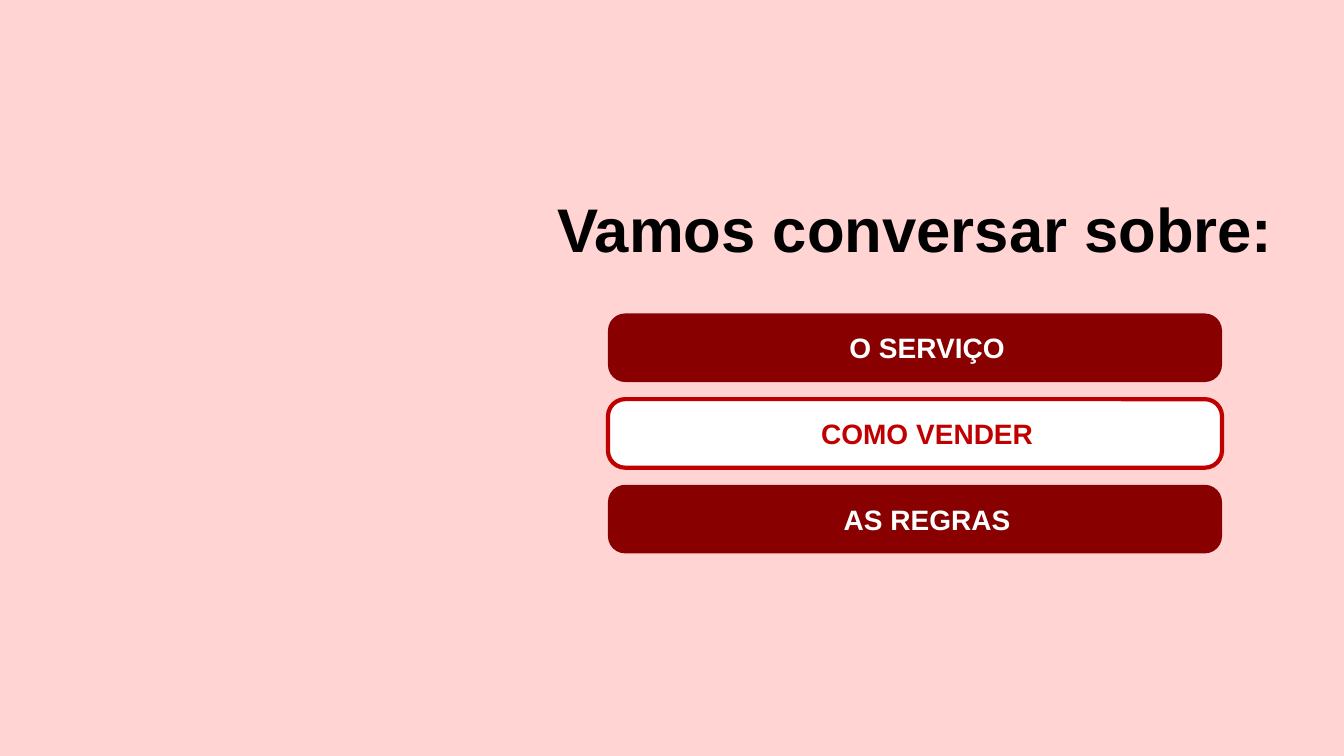
from pptx import Presentation
from pptx.dml.color import RGBColor
from pptx.enum.shapes import MSO_SHAPE
from pptx.enum.text import MSO_ANCHOR, PP_ALIGN
from pptx.util import Inches, Pt

COLORS = {
    "background": "FFD4D3",
    "topic": "880000",
    "current": "C00000",
    "white": "FFFFFF",
    "black": "000000",
}
TOPICS = ["O SERVIÇO", "COMO VENDER", "AS REGRAS"]
CURRENT_TOPIC = "COMO VENDER"
TOPIC_TOP = 3.11
TOPIC_STEP = 0.85


def rgb(name):
    return RGBColor.from_string(COLORS[name])


def write_text(frame, text, size, color, indent=0, anchor=MSO_ANCHOR.TOP):
    frame.word_wrap = True
    frame.vertical_anchor = anchor
    paragraph = frame.paragraphs[0]
    paragraph.alignment = PP_ALIGN.CENTER
    if indent:
        properties = paragraph._p.get_or_add_pPr()
        properties.set("marL", str(Inches(indent)))
        properties.set("indent", "0")
    run = paragraph.add_run()
    run.text = text
    run.font.name = "Arial"
    run.font.size = Pt(size)
    run.font.bold = True
    run.font.color.rgb = rgb(color)


def add_heading(slide, text):
    heading = slide.shapes.add_textbox(
        Inches(5.25), Inches(1.85), Inches(7.66), Inches(0.84)
    )
    write_text(heading.text_frame, text, size=44, color="black")


def add_topic(slide, text, top, current):
    topic = slide.shapes.add_shape(
        MSO_SHAPE.ROUNDED_RECTANGLE,
        Inches(6.03), Inches(top), Inches(6.09), Inches(0.68),
    )
    topic.adjustments[0] = 0.25
    topic.shadow.inherit = False
    topic.fill.solid()
    topic.fill.fore_color.rgb = rgb("white" if current else "topic")
    if current:
        topic.line.color.rgb = rgb("current")
        topic.line.width = Pt(3)
    else:
        topic.line.fill.background()
    write_text(
        topic.text_frame, text, size=20,
        color="current" if current else "white",
        indent=0.24, anchor=MSO_ANCHOR.MIDDLE,
    )


def main():
    deck = Presentation()
    deck.slide_width = Inches(13.33)
    deck.slide_height = Inches(7.5)
    slide = deck.slides.add_slide(deck.slide_layouts[6])
    slide.background.fill.solid()
    slide.background.fill.fore_color.rgb = rgb("background")
    for index, text in enumerate(TOPICS):
        add_topic(slide, text, TOPIC_TOP + index * TOPIC_STEP, text == CURRENT_TOPIC)
    add_heading(slide, "Vamos conversar sobre:")
    deck.save("out.pptx")


if __name__ == "__main__":
    main()
